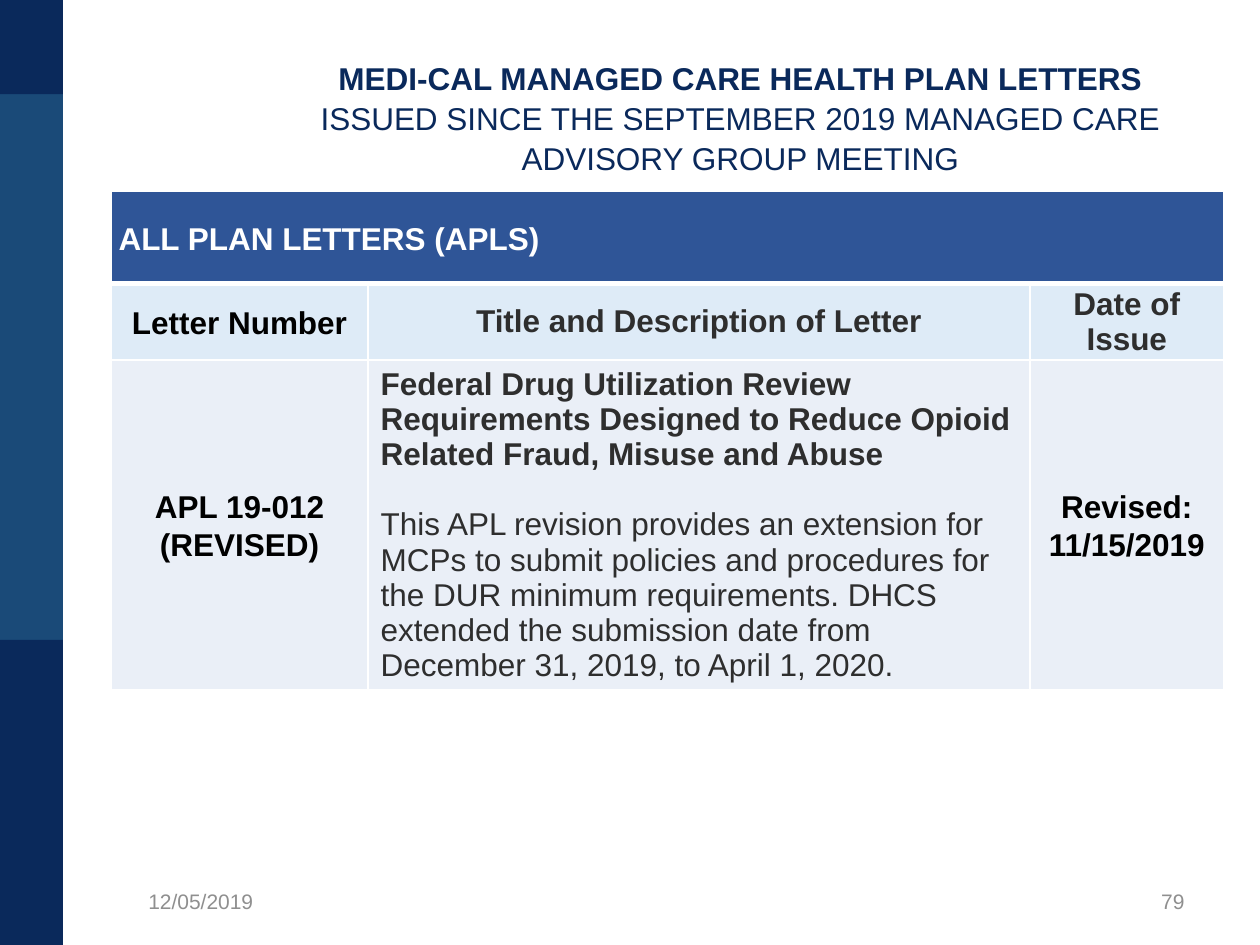
from pptx import Presentation
from pptx.dml.color import RGBColor
from pptx.enum import shapes, text
from pptx.oxml import parse_xml
from pptx.oxml.ns import nsdecls
from pptx.util import Cm, Pt

NAVY, BLUE, GREY, DARK, BLACK, WHITE = "0A295B", "1A4A78", "8F8F8F", "2E2E2E", "000000", "FFFFFF"
LEFT, MID, RIGHT = text.PP_ALIGN.LEFT, text.PP_ALIGN.CENTER, text.PP_ALIGN.RIGHT

BARS = [(0, 19.05, BLUE), (0, 1.9, NAVY), (12.9, 6.15, NAVY)]
TITLE = [
    ("MEDI-CAL MANAGED CARE HEALTH PLAN LETTERS", True),
    ("ISSUED SINCE THE SEPTEMBER 2019 MANAGED CARE ADVISORY GROUP MEETING", False),
]
FOOT = [(2.74, "12/05/2019", LEFT), (18.21, "79", RIGHT)]
COLS = [5.18, 13.34, 3.91]
ROWS = [(1.85, "2F5597"), (1.55, "DEEBF7"), (6.63, "EAEFF7")]
CELLS = [
    [([("ALL PLAN LETTERS (APLS)", True)], WHITE, LEFT, 1)],
    [
        ([("Letter Number", True)], BLACK, MID, 1.08),
        ([("Title and Description of Letter", True)], DARK, MID, 1),
        ([("Date of Issue", True)], DARK, MID, 1),
    ],
    [
        ([("APL 19-012 (REVISED)", True)], BLACK, MID, 1.08),
        ([
            ("Federal Drug Utilization Review Requirements Designed to Reduce Opioid "
             "Related Fraud, Misuse and Abuse", True),
            ("This APL revision provides an extension for MCPs to submit policies and "
             "procedures for the DUR minimum requirements. DHCS extended the submission "
             "date from December 31, 2019, to April 1, 2020.", False),
        ], DARK, LEFT, 1),
        ([("Revised: 11/15/2019", True)], BLACK, MID, 1.08),
    ],
]


def tint(fmt, code):
    fmt.rgb = RGBColor.from_string(code)


def paint(fill, code):
    fill.solid()
    tint(fill.fore_color, code)


def style(para, size, code, align, bold=None, lead=None):
    para.alignment = align
    para.line_spacing = lead
    para.font.name, para.font.size, para.font.bold = "Arial", Pt(size), bold
    tint(para.font.color, code)


def edge(cell, top, base):
    props = cell._tc.get_or_add_tcPr()
    for side, width in (("L", 1), ("R", 1), ("T", top), ("B", base)):
        props.append(parse_xml(
            f'<a:ln{side} {nsdecls("a")} w="{Pt(width)}"><a:solidFill>'
            f'<a:srgbClr val="{WHITE}"/></a:solidFill></a:ln{side}>'))


def add_bars(slide):
    for top, high, code in BARS:
        bar = slide.shapes.add_shape(
            shapes.MSO_SHAPE.RECTANGLE, 0, Cm(top), Cm(1.27), Cm(high))
        bar.shadow.inherit = False
        paint(bar.fill, code)
        bar.line.fill.background()


def add_title(slide):
    title = slide.shapes.title
    title.left, title.top, title.width, title.height = Cm(5.08), Cm(0.76), Cm(19.69), Cm(3.18)
    frame = title.text_frame
    frame.vertical_anchor = text.MSO_ANCHOR.MIDDLE
    para = frame.paragraphs[0]
    for i, (words, bold) in enumerate(TITLE):
        if i:
            para.add_line_break()
        run = para.add_run()
        run.text, run.font.bold = words, bold
    style(para, 18, NAVY, MID, lead=1.07)


def add_grid(slide):
    high = sum(h for h, _ in ROWS)
    grid = slide.shapes.add_table(
        len(ROWS), len(COLS), Cm(2.24), Cm(3.86), Cm(sum(COLS)), Cm(high)).table
    grid.first_row = grid.horz_banding = False
    for col, wide in zip(grid.columns, COLS):
        col.width = Cm(wide)
    for r, (high, code) in enumerate(ROWS):
        grid.rows[r].height = Cm(high)
        for c in range(len(COLS)):
            cell = grid.cell(r, c)
            edge(cell, 3 if r == 1 else 1, 3 if r == 0 else 1)
            paint(cell.fill, code)
            cell.vertical_anchor = text.MSO_ANCHOR.MIDDLE
            if r < 2:
                cell.margin_left = cell.margin_right = Cm(0.15)
                cell.margin_top = cell.margin_bottom = 0
        for c, (paras, ink, align, lead) in enumerate(CELLS[r]):
            frame = grid.cell(r, c).text_frame
            for i, (words, bold) in enumerate(paras):
                para = frame.add_paragraph() if i else frame.paragraphs[0]
                para.text = words
                style(para, 18, ink, align, bold, lead)
                if i:
                    para.space_before = Pt(20)
    head = grid.cell(0, 0)
    head.merge(grid.cell(0, len(COLS) - 1))
    head.margin_top = Cm(0.1)


def add_foot(slide):
    for left, words, align in FOOT:
        box = slide.shapes.add_textbox(Cm(left), Cm(17.65), Cm(5.92), Cm(1.02))
        frame = box.text_frame
        frame.word_wrap = True
        frame.vertical_anchor = text.MSO_ANCHOR.MIDDLE
        frame.text = words
        style(frame.paragraphs[0], 12, GREY, align)


def main():
    deck = Presentation()
    deck.slide_width, deck.slide_height = Cm(25.4), Cm(19.05)
    slide = deck.slides.add_slide(deck.slide_layouts[5])
    add_bars(slide)
    add_grid(slide)
    add_foot(slide)
    add_title(slide)
    deck.save("out.pptx")


if __name__ == "__main__":
    main()
